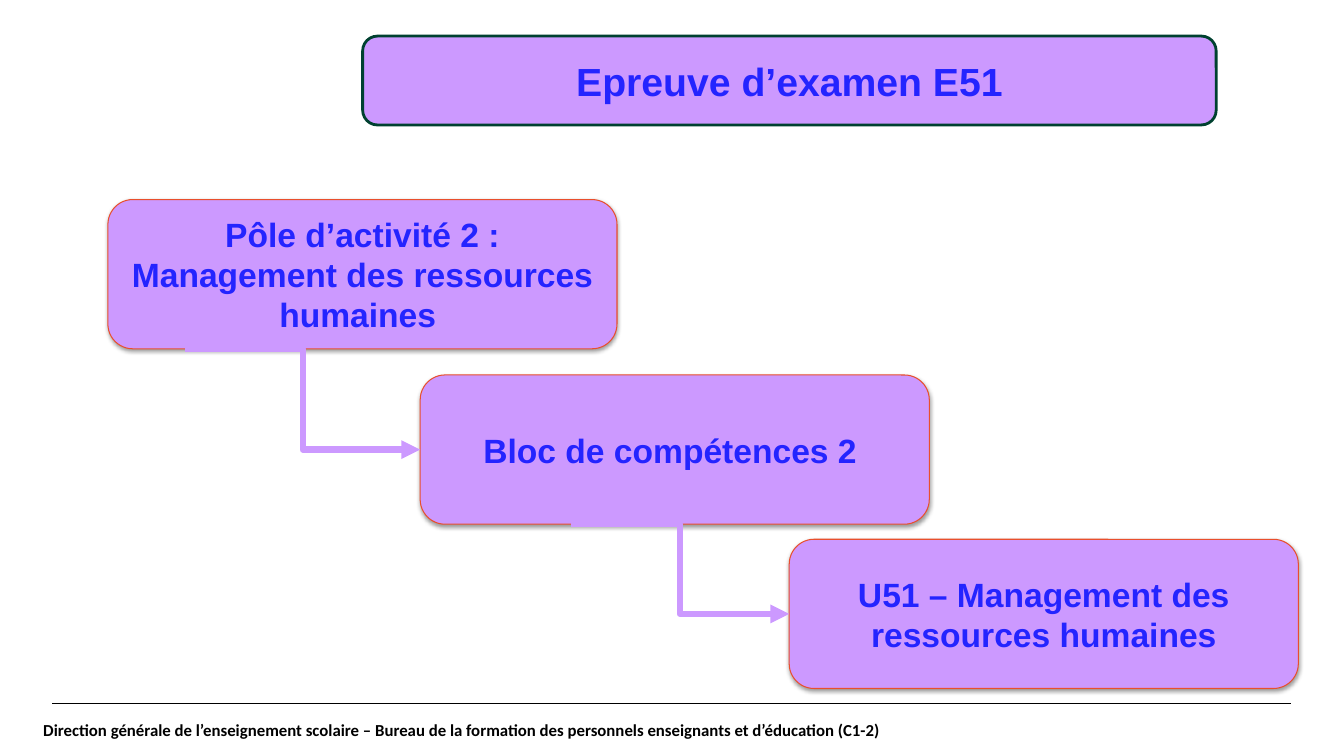
from lxml.etree import SubElement
from pptx import Presentation
from pptx.dml.color import RGBColor
from pptx.enum.shapes import MSO_CONNECTOR, MSO_SHAPE
from pptx.enum.text import MSO_ANCHOR, PP_ALIGN
from pptx.oxml.ns import qn
from pptx.util import Cm, Pt

COLORS = {
    "lilac": "CC99FF",
    "blue": "2424FF",
    "orange": "E94F2D",
    "green": "004130",
    "black": "000000",
}
STEP_WIDTH, STEP_HEIGHT = 12.83, 3.76
FOOTER_TOP = 17.73

# Left, top and text of each step
STEPS = [
    (2.72, 5.03, "Pôle d’activité 2 : Management des ressources humaines "),
    (10.59, 9.45, "Bloc de compétences 2 "),
    (19.89, 13.59, "U51 – Management des ressources humaines"),
]
# Where each arrow leaves the bottom of its step
ARROW_STARTS = [4.67, 14.38]


def color(name):
    return RGBColor.from_string(COLORS[name])


def write(frame, text, size, font_name, font_color, align):
    frame.word_wrap = True
    frame.vertical_anchor = MSO_ANCHOR.MIDDLE
    frame.text = text
    paragraph = frame.paragraphs[0]
    paragraph.alignment = align
    font = paragraph.runs[0].font
    font.name, font.size, font.bold = font_name, Pt(size), True
    font.color.rgb = color(font_color)


def add_box(slide, left, top, width, height, text, size, border, border_width):
    box = slide.shapes.add_shape(
        MSO_SHAPE.ROUNDED_RECTANGLE, Cm(left), Cm(top), Cm(width), Cm(height))
    box.shadow.inherit = False
    box.fill.solid()
    box.fill.fore_color.rgb = color("lilac")
    box.line.color.rgb = color(border)
    box.line.width = Pt(border_width)
    write(box.text_frame, text, size, "Arial", "blue", PP_ALIGN.CENTER)
    return box


def add_soft_shadow(box):
    effects = box._element.spPr.find(qn("a:effectLst"))
    shadow = SubElement(effects, qn("a:outerShdw"), blurRad=str(Pt(3.1)),
                        dist=str(Pt(1.6)), dir="5400000", rotWithShape="0")
    tint = SubElement(shadow, qn("a:srgbClr"), val=COLORS["black"])
    SubElement(tint, qn("a:alpha"), val="38000")


def add_line(slide, kind, start, end, line_color, width, arrow=False):
    line = slide.shapes.add_connector(
        kind, Cm(start[0]), Cm(start[1]), Cm(end[0]), Cm(end[1]))
    line.line.color.rgb = color(line_color)
    line.line.width = Pt(width)
    properties = line._element.spPr
    if arrow:
        SubElement(properties.find(qn("a:ln")), qn("a:tailEnd"), type="triangle")
    SubElement(properties, qn("a:effectLst"))


def add_footer(slide, text):
    add_line(slide, MSO_CONNECTOR.STRAIGHT, (1.32, FOOTER_TOP),
             (32.54, FOOTER_TOP), "black", 0.8)
    footer = slide.shapes.add_textbox(Cm(1.09), Cm(FOOTER_TOP), Cm(31.85), Cm(1.32))
    frame = footer.text_frame
    frame.margin_left = frame.margin_right = 0
    frame.margin_top = frame.margin_bottom = 0
    write(frame, text, 12, "Calibri", "black", PP_ALIGN.LEFT)


def main():
    presentation = Presentation()
    presentation.slide_width, presentation.slide_height = Cm(33.87), Cm(19.05)
    slide = presentation.slides.add_slide(presentation.slide_layouts[6])

    add_footer(slide, "Direction générale de l’enseignement scolaire – Bureau de la "
                      "formation des personnels enseignants et d’éducation (C1-2)")

    # Staircase of steps
    for left, top, text in STEPS:
        step = add_box(slide, left, top, STEP_WIDTH, STEP_HEIGHT, text, 24,
                       "orange", 0.75)
        add_soft_shadow(step)

    # Title
    add_box(slide, 9.14, 0.91, 21.51, 2.24, "Epreuve d’examen E51", 28, "green", 2)

    # Arrows from the bottom of a step to the left side of the next
    for start_x, step, following in zip(ARROW_STARTS, STEPS, STEPS[1:]):
        add_line(slide, MSO_CONNECTOR.ELBOW, (start_x, step[1] + STEP_HEIGHT),
                 (following[0], following[1] + STEP_HEIGHT / 2), "lilac", 4.5,
                 arrow=True)

    presentation.save("out.pptx")


if __name__ == "__main__":
    main()
